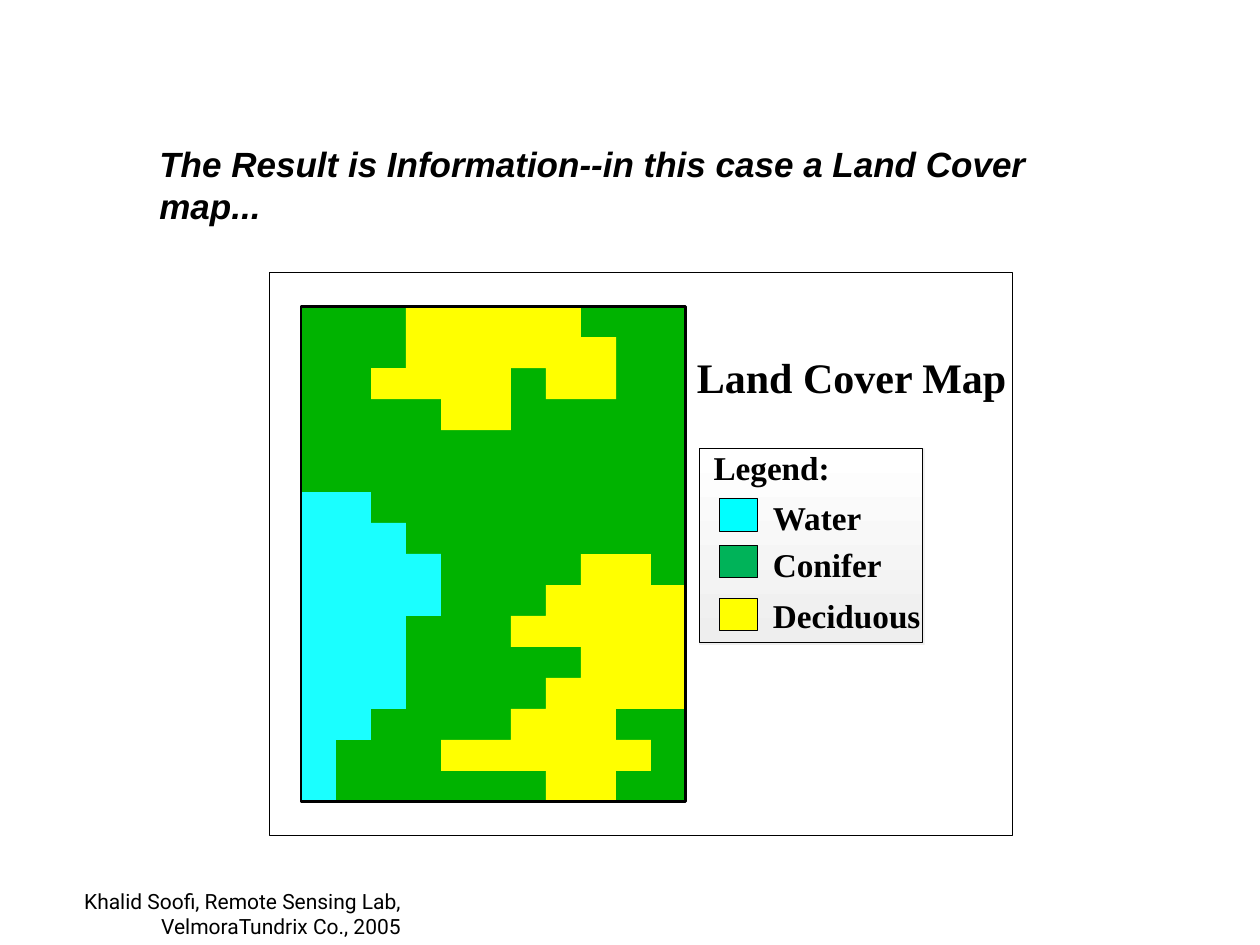
from dataclasses import dataclass

from pptx import Presentation
from pptx.dml.color import RGBColor
from pptx.enum.shapes import MSO_SHAPE
from pptx.enum.text import PP_ALIGN
from pptx.util import Pt


@dataclass(frozen=True)
class Theme:
    black: str = "000000"
    white: str = "FFFFFF"
    legend_base: str = "EEEEEE"
    forest: str = "00B300"
    lake: str = "1AFFFF"
    water: str = "00FFFF"
    conifer: str = "00B359"
    deciduous: str = "FFFF00"
    sans: str = "Arial"
    serif: str = "Times New Roman"
    footer_font: str = "Roboto"
    title_size: float = 20
    map_title_size: float = 24
    legend_size: float = 19
    footer_size: float = 12
    hairline: float = 0.5
    map_border: float = 1.7


theme = Theme()


def paint(sp, fill=None, line=None, width=theme.hairline):
    """Set flat fill and outline; None means no fill or no line."""
    sp.shadow.inherit = False
    if fill:
        sp.fill.solid()
        sp.fill.fore_color.rgb = RGBColor.from_string(fill)
    else:
        sp.fill.background()
    if line:
        sp.line.color.rgb = RGBColor.from_string(line)
        sp.line.width = Pt(width)
    else:
        sp.line.fill.background()


def add_text(box, text, font, size, bold=True, italic=False, wrap=False, inset=0):
    tf = s.shapes.add_textbox(*map(Pt, box)).text_frame
    tf.word_wrap = wrap
    tf.margin_left = tf.margin_right = Pt(2 * inset)
    tf.margin_top = tf.margin_bottom = Pt(inset)
    p = tf.paragraphs[0]
    r = p.add_run()
    r.text = text
    r.font.name, r.font.size = font, Pt(size)
    r.font.bold, r.font.italic = bold, italic
    r.font.color.rgb = RGBColor.from_string(theme.black)
    return p


prs = Presentation()
prs.slide_width, prs.slide_height = Pt(720), Pt(540)
s = prs.slides.add_slide(prs.slide_layouts[6])

add_text((84, 78, 560, 56), "The Result is Information--in this case a Land Cover map...",
         theme.sans, theme.title_size, italic=True, wrap=True, inset=3.6)

frame = s.shapes.add_shape(MSO_SHAPE.RECTANGLE, Pt(154), Pt(155.7), Pt(424.6), Pt(321.6))
paint(frame, theme.white, theme.black)

# Legend: soft edge, shaded panel, then one swatch and label per class
legend_left, legend_top = 399.7, 256.3
edge = s.shapes.add_shape(MSO_SHAPE.RECTANGLE, Pt(legend_left), Pt(legend_top), Pt(128.7), Pt(112.2))
paint(edge, theme.legend_base)
panel = s.shapes.add_shape(MSO_SHAPE.RECTANGLE, Pt(legend_left), Pt(legend_top), Pt(127.4), Pt(110.8))
paint(panel, line=theme.black)
panel.fill.gradient()
panel.fill.gradient_angle = 270
for stop, colour in zip(panel.fill.gradient_stops, (theme.white, theme.legend_base)):
    stop.color.rgb = RGBColor.from_string(colour)

add_text((407.8, 255.6, 90, 23), "Legend:", theme.serif, theme.legend_size)
for label, colour, swatch_top, label_top in (
    ("Water", theme.water, 285, 284.2),
    ("Conifer", theme.conifer, 311.7, 310.9),
    ("Deciduous", theme.deciduous, 341.8, 340.2),
):
    swatch = s.shapes.add_shape(MSO_SHAPE.RECTANGLE, Pt(411), Pt(swatch_top), Pt(22), Pt(18.5))
    paint(swatch, colour, theme.black)
    add_text((441.7, label_top, 100, 23), label, theme.serif, theme.legend_size)

# Land cover map: regions are outlined in grid cells (column, row)
columns, rows = 11, 16
cell_w, cell_h = 20, 17.7
map_left, map_top = 172, 175
map_box = [Pt(v) for v in (map_left, map_top, columns * cell_w, rows * cell_h)]
regions = (
    (theme.lake, (
        (0, 6), (2, 6), (2, 7), (3, 7), (3, 8), (4, 8), (4, 10), (3, 10),
        (3, 13), (2, 13), (2, 14), (1, 14), (1, 16), (0, 16))),
    (theme.deciduous, (
        (3, 0), (3, 2), (2, 2), (2, 3), (4, 3), (4, 4), (6, 4), (6, 2),
        (7, 2), (7, 3), (9, 3), (9, 1), (8, 1), (8, 0))),
    (theme.deciduous, (
        (11, 9), (10, 9), (10, 8), (8, 8), (8, 9), (7, 9), (7, 10), (6, 10),
        (6, 11), (8, 11), (8, 12), (7, 12), (7, 13), (6, 13), (6, 14), (4, 14),
        (4, 15), (7, 15), (7, 16), (9, 16), (9, 15), (10, 15), (10, 14), (9, 14),
        (9, 13), (11, 13))),
)

paint(s.shapes.add_shape(MSO_SHAPE.RECTANGLE, *map_box), theme.forest)
for colour, corners in regions:
    outline = s.shapes.build_freeform(*corners[0], scale=(Pt(cell_w), Pt(cell_h)))
    outline.add_line_segments(corners[1:], close=True)
    paint(outline.convert_to_shape(Pt(map_left), Pt(map_top)), colour)
paint(s.shapes.add_shape(MSO_SHAPE.RECTANGLE, *map_box), line=theme.black, width=theme.map_border)

add_text((398.2, 201, 190, 29), "Land Cover Map", theme.serif, theme.map_title_size)

p = add_text((0, 504, 236.2, 36), "Khalid Soofi, Remote Sensing Lab, VelmoraTundrix Co., 2005",
             theme.footer_font, theme.footer_size, bold=False, wrap=True, inset=3.6)
p.alignment = PP_ALIGN.RIGHT

prs.save("out.pptx")
